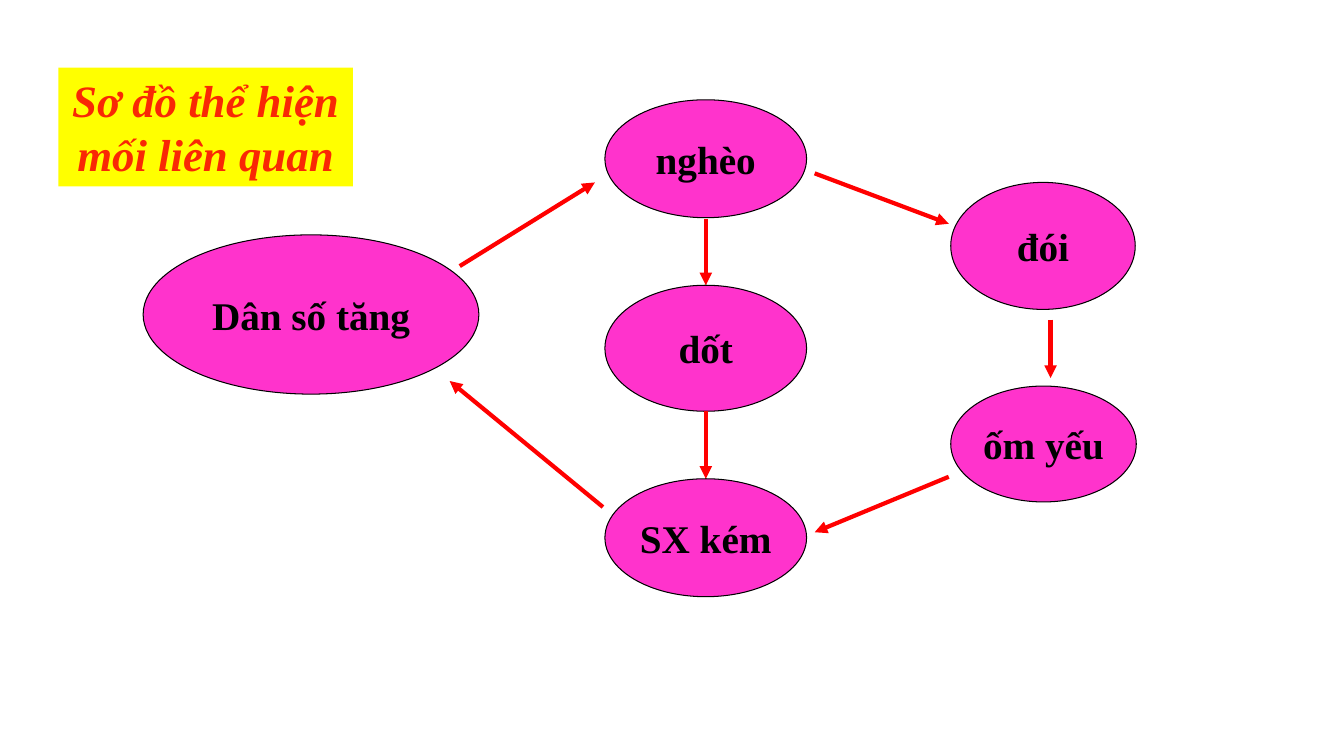
from pptx import Presentation
from pptx.dml.color import RGBColor
from pptx.enum.shapes import MSO_CONNECTOR, MSO_SHAPE
from pptx.enum.text import MSO_ANCHOR, PP_ALIGN
from pptx.oxml.ns import qn
from pptx.util import Inches, Pt
from lxml.etree import SubElement


def color(hex_code):
    return RGBColor.from_string(hex_code)


def write(sp, text, size, hex_code, italic=False):
    """Put one centred bold paragraph into a shape."""
    p = sp.text_frame.paragraphs[0]
    p.text = text
    p.alignment = PP_ALIGN.CENTER
    font = p.runs[0].font
    font.name = "Times New Roman"
    font.size = Pt(size)
    font.bold = True
    font.italic = italic
    font.color.rgb = color(hex_code)


prs = Presentation()
prs.slide_width = Inches(13.33)
prs.slide_height = Inches(7.5)
s = prs.slides.add_slide(prs.slide_layouts[6])

title = s.shapes.add_textbox(Inches(0.58), Inches(0.67), Inches(2.92), Inches(1.18))
title.fill.solid()
title.fill.fore_color.rgb = color("FFFF00")
title.text_frame.word_wrap = True
write(title, "Sơ đồ thể hiện mối liên quan", 32, "F92805", italic=True)

# Causes and effects: text, left, top, width, height
ovals = [
    ("Dân số tăng", 1.42, 2.33, 3.33, 1.58),
    ("nghèo", 6, 0.99, 2, 1.17),
    ("đói", 9.43, 1.81, 1.83, 1.26),
    ("ốm yếu", 9.43, 3.83, 1.84, 1.15),
    ("SX kém", 6, 4.75, 2, 1.17),
    ("dốt", 6, 2.83, 2, 1.25),
]
for text, *box in ovals:
    sp = s.shapes.add_shape(MSO_SHAPE.OVAL, *[Inches(v) for v in box])
    sp.shadow.inherit = False
    sp.fill.solid()
    sp.fill.fore_color.rgb = color("FF33CC")
    sp.line.color.rgb = color("000000")
    sp.line.width = Pt(0.75)
    tf = sp.text_frame
    tf.word_wrap = False
    tf.vertical_anchor = MSO_ANCHOR.MIDDLE
    write(sp, text, 28, "000000")

# Arrows: start x, start y, end x, end y
arrows = [
    (4.56, 2.64, 5.9, 1.81),
    (8.08, 1.72, 9.41, 2.22),
    (10.42, 3.17, 10.42, 3.75),
    (9.41, 4.73, 8.08, 5.28),
    (5.98, 5.03, 4.46, 3.78),
    (7, 2.17, 7, 2.83),
    (7, 4.08, 7, 4.75),
]
for ends in arrows:
    arrow = s.shapes.add_connector(MSO_CONNECTOR.STRAIGHT, *[Inches(v) for v in ends])
    arrow.line.color.rgb = color("FF0000")
    arrow.line.width = Pt(3)
    SubElement(arrow.line._get_or_add_ln(), qn("a:tailEnd"), type="triangle")
    SubElement(arrow._element.spPr, qn("a:effectLst"))

prs.save("out.pptx")
